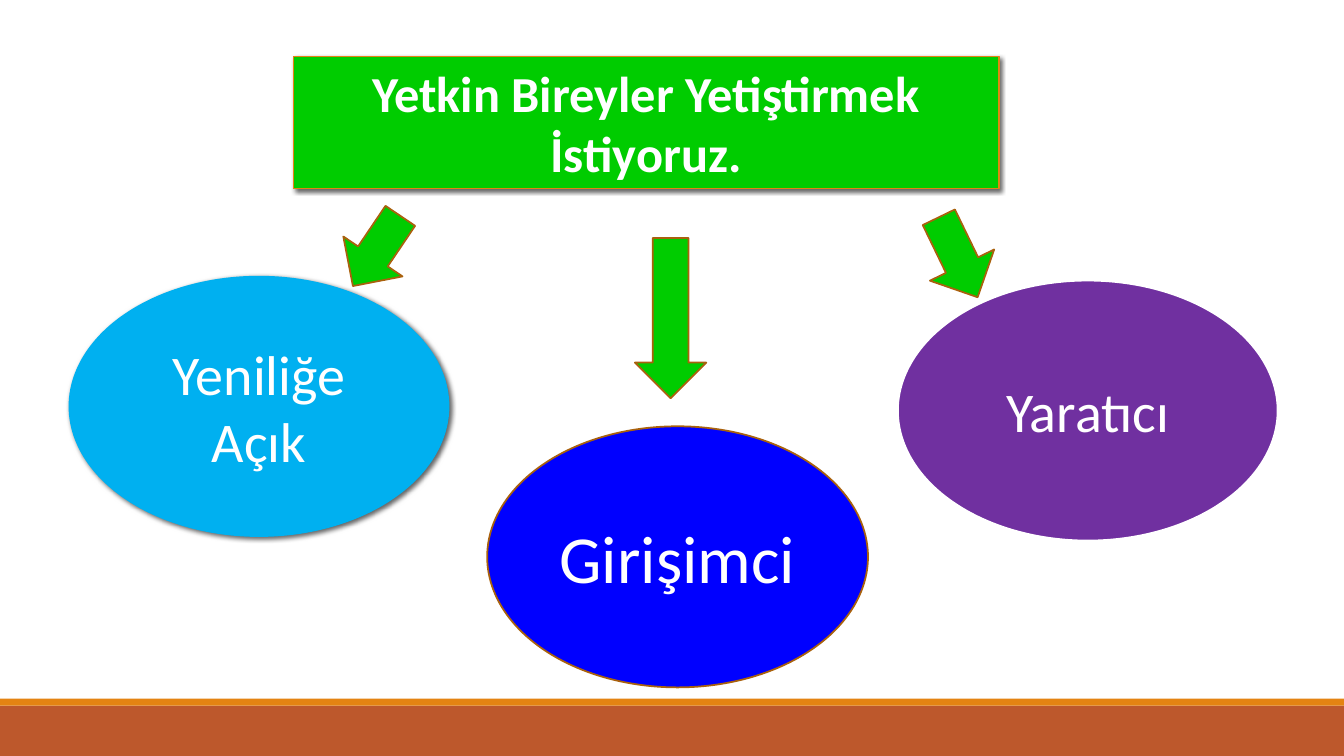
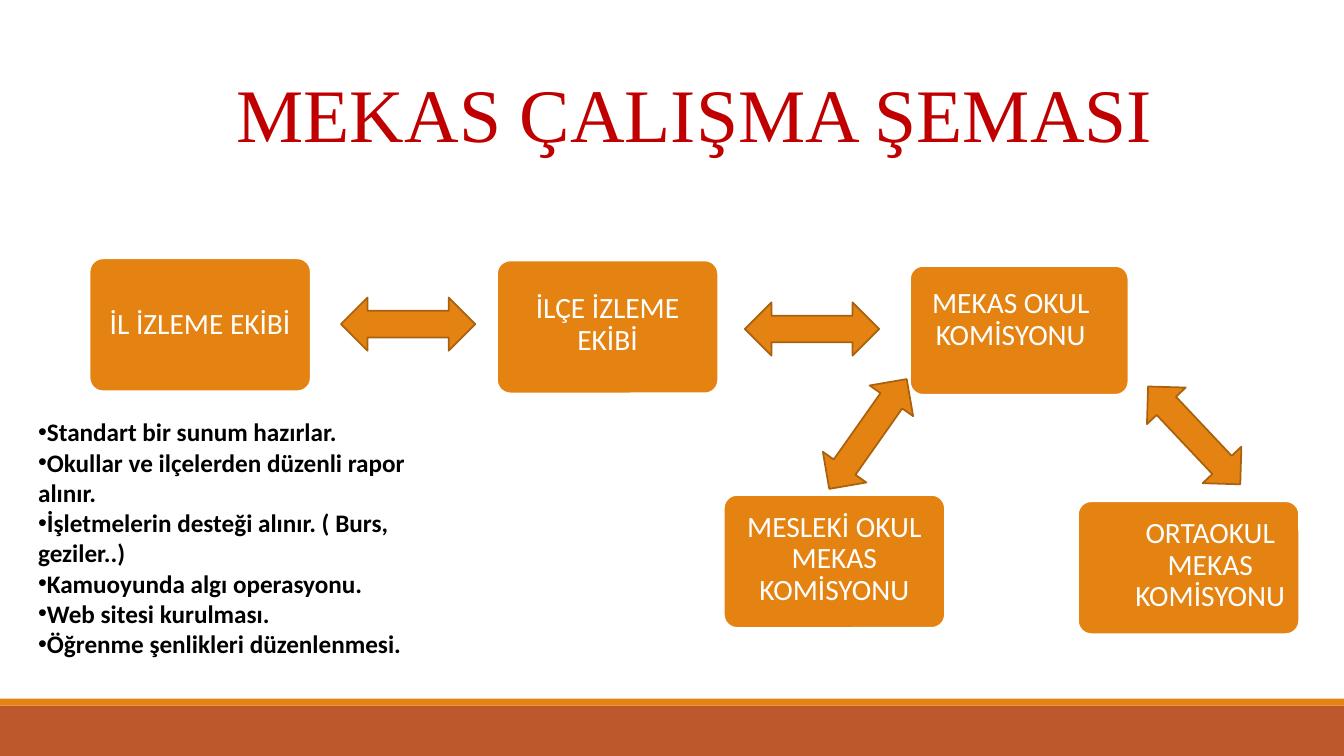
from dataclasses import dataclass

from pptx import Presentation
from pptx import util as u
from pptx.dml.color import RGBColor
from pptx.enum import shapes, text
from pptx.oxml import parse_xml
from pptx.oxml.ns import nsdecls, qn

Pt = u.Pt
MSO = shapes.MSO_SHAPE
CENTER = text.PP_ALIGN.CENTER
TOP, MIDDLE = text.MSO_ANCHOR.TOP, text.MSO_ANCHOR.MIDDLE


@dataclass(frozen=True)
class Theme:
    font: str = "Calibri"
    title_font: str = "Times New Roman"
    white: str = "FFFFFF"
    black: str = "000000"
    red: str = "C00000"
    rust: str = "BD582C"
    orange: str = "E48312"
    brown: str = "A9610D"
    green: str = "00CC00"
    sky: str = "00B0F0"
    blue: str = "0000FF"
    purple: str = "7030A0"
    title: int = 54
    banner: int = 36
    oval: int = 40
    oval_big: int = 48
    box: int = 21
    body: int = 18
    outline: float = 1.25


T = Theme()


def apply(obj, fmt):
    for name, value in fmt.items():
        setattr(obj, name, value)


def place(sp, box):
    apply(sp, dict(zip(("left", "top", "width", "height"), map(Pt, box))))


def paint(sp, fill, line=None, width=T.outline):
    sp.shadow.inherit = False
    sp.fill.solid()
    sp.fill.fore_color.rgb = RGBColor.from_string(fill)
    if line:
        sp.line.color.rgb = RGBColor.from_string(line)
        sp.line.width = Pt(width)
    else:
        sp.line.fill.background()


def cast_shadow(sp, blur):
    effects = sp.element.spPr.find(qn("a:effectLst"))
    effects.append(parse_xml(
        f'<a:outerShdw {nsdecls("a")} blurRad="{Pt(blur)}" dist="{Pt(2)}" '
        f'dir="2700000" algn="tl" rotWithShape="0"><a:srgbClr val="{T.black}">'
        '<a:alpha val="60000"/></a:srgbClr></a:outerShdw>'))


def write(sp, lines, size, color=T.white, font=T.font, bold=False,
          align=CENTER, anchor=MIDDLE, spacing=1.0):
    tf = sp.text_frame
    apply(tf, {"word_wrap": True, "auto_size": text.MSO_AUTO_SIZE.NONE,
               "vertical_anchor": anchor})
    for i, line in enumerate(lines):
        p = tf.add_paragraph() if i else tf.paragraphs[0]
        apply(p, {"alignment": align, "line_spacing": spacing,
                  "space_before": Pt(0), "space_after": Pt(0)})
        r = p.add_run()
        r.text = line
        apply(r.font, {"name": font, "size": Pt(size), "bold": bold})
        r.font.color.rgb = RGBColor.from_string(color)


def add_bullets(sp):
    for p in sp.text_frame.paragraphs:
        pPr = p._p.get_or_add_pPr()
        pPr.set("marL", "0")
        pPr.set("indent", "0")
        pPr.append(parse_xml(f'<a:buChar {nsdecls("a")} char="•"/>'))


def add_shape(s, kind, box, fill, line=None, width=T.outline, rotation=0):
    sp = s.shapes.add_shape(kind, *map(Pt, box))
    paint(sp, fill, line, width)
    sp.rotation = rotation
    return sp


def add_bands(prs, s):
    tree = prs.slide_master.shapes.element
    bands = [((0, 504, 960, 36), T.rust), ((0, 499, 960, 5), T.orange)]
    for i, (box, fill) in enumerate(bands):
        el = add_shape(s, MSO.RECTANGLE, box, fill).element
        el.nvSpPr.cNvPr.set("id", str(100 + i))
        tree.insert(2 + i, el)


def add_oval(s, left, top, label, fill, size=T.oval, line=None, width=T.outline):
    sp = add_shape(s, MSO.OVAL, (left, top, 272, 186.5), fill, line, width)
    write(sp, [label], size)
    return sp


def add_box(s, left, top, label, width=158, height=95, dx=0, dy=0):
    sp = add_shape(s, MSO.ROUNDED_RECTANGLE, (left, top, width, height),
                   T.orange, T.white)
    sp.adjustments[0] = 0.1
    write(sp, [label], T.box, spacing=0.9)
    pad = 4.5
    apply(sp.text_frame, {
        "margin_left": Pt(pad + max(0, 2 * dx)),
        "margin_right": Pt(pad + max(0, -2 * dx)),
        "margin_top": Pt(pad + max(0, 2 * dy)),
        "margin_bottom": Pt(pad + max(0, -2 * dy))})


def build_goals(s):
    banner = s.shapes.title
    place(banner, (209.5, 40.5, 504, 94))
    paint(banner, T.green, T.orange, 1)
    cast_shadow(banner, 3)
    write(banner, ["Yetkin Bireyler Yetiştirmek İstiyoruz."], T.banner,
          bold=True, anchor=TOP)

    cast_shadow(add_oval(s, 49, 197, "Yeniliğe Açık", T.sky), 3.5)
    add_oval(s, 348, 304.5, "Girişimci", T.blue, T.oval_big, T.brown)
    add_oval(s, 641, 200, "Yaratıcı", T.purple, line=T.white, width=2)

    for left, top, height, rotation in ((243.5, 149, 60.5, 34),
                                        (453.5, 170, 114.5, 0),
                                        (659, 152, 63.5, 334.1)):
        add_shape(s, MSO.DOWN_ARROW, (left, top, 51, height),
                  T.green, T.brown, rotation=rotation)


def build_scheme(s):
    title, body = s.placeholders
    place(title, (82, 44, 828, 73))
    write(title, ["MEKAS ÇALIŞMA ŞEMASI"], T.title, T.red, T.title_font, anchor=TOP)

    add_box(s, 64, 184.5, "İL İZLEME EKİBİ")
    add_box(s, 355, 186, "İLÇE İZLEME EKİBİ", dy=-1.5)
    add_box(s, 650, 190, "MEKAS OKUL KOMİSYONU", 156, 92, dx=-6, dy=-7.5)
    add_box(s, 517, 353.5, "MESLEKİ OKUL MEKAS KOMİSYONU", dy=-1.5)
    add_box(s, 770, 358, "ORTAOKUL MEKAS KOMİSYONU", dx=15.5, dy=-1.5)

    for left, top in ((243.5, 212.5), (532, 216)):
        add_shape(s, MSO.LEFT_RIGHT_ARROW, (left, top, 96, 38), T.orange, T.brown)
    for left, top, rotation in ((601, 262, 35.2), (834, 263, 316.7)):
        add_shape(s, MSO.UP_DOWN_ARROW, (left, top, 38, 96),
                  T.orange, T.brown, rotation=rotation)

    place(body, (20, 294, 290, 204))
    write(body, ["Standart bir sunum hazırlar.",
                 "Okullar ve ilçelerden düzenli rapor alınır.",
                 "İşletmelerin desteği alınır. ( Burs, geziler..)",
                 "Kamuoyunda algı operasyonu.",
                 "Web sitesi kurulması.",
                 "Öğrenme şenlikleri düzenlenmesi."],
          T.body, T.black, bold=True, align=text.PP_ALIGN.LEFT, anchor=TOP)
    add_bullets(body)


def main():
    prs = Presentation()
    apply(prs, {"slide_width": Pt(960), "slide_height": Pt(540)})
    title_only, title_and_body = prs.slide_layouts[5], prs.slide_layouts[1]
    goals = prs.slides.add_slide(title_only)
    add_bands(prs, goals)
    build_goals(goals)
    build_scheme(prs.slides.add_slide(title_and_body))
    prs.save("out.pptx")


if __name__ == "__main__":
    main()
